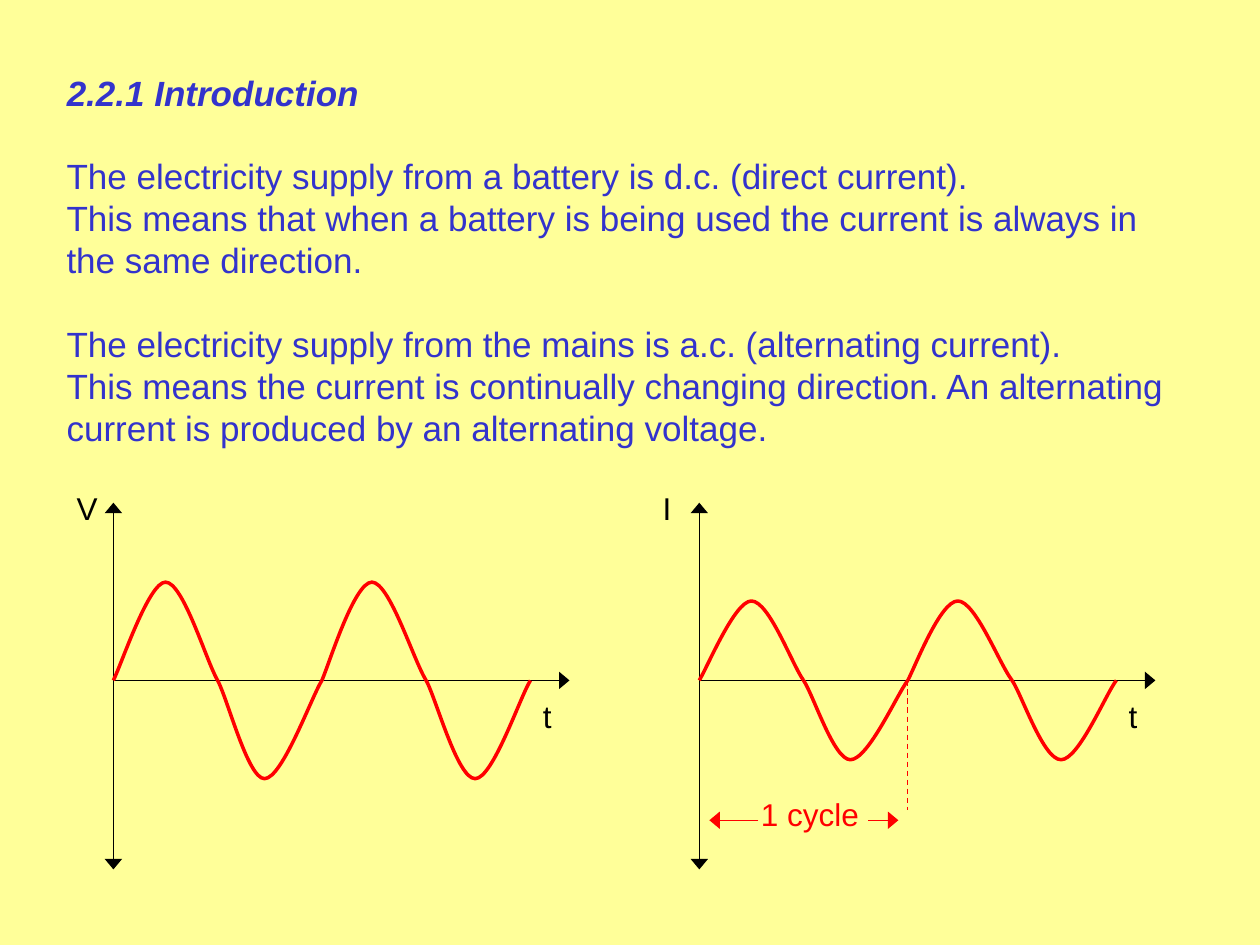
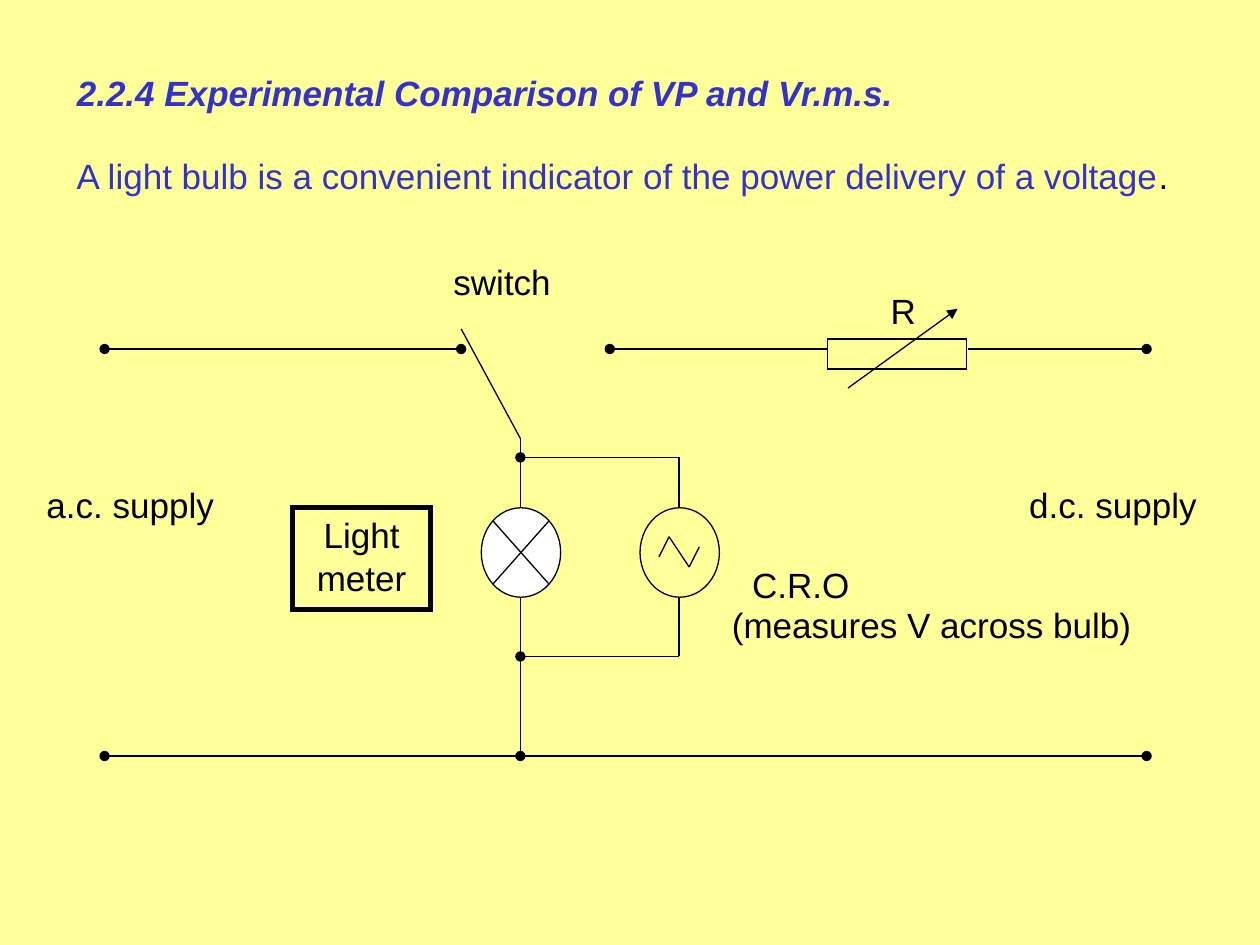
from lxml import etree
from pptx import Presentation
from pptx.dml.color import RGBColor
from pptx.enum.dml import MSO_LINE
from pptx.enum.shapes import MSO_CONNECTOR, MSO_SHAPE
from pptx.enum.text import MSO_ANCHOR, MSO_AUTO_SIZE, PP_ALIGN
from pptx.oxml.ns import qn
from pptx.util import Inches, Pt

STRAIGHT = MSO_CONNECTOR.STRAIGHT
DASH = MSO_LINE.DASH
RECTANGLE = MSO_SHAPE.RECTANGLE
OVAL = MSO_SHAPE.OVAL
LAMP = MSO_SHAPE.FLOWCHART_SUMMING_JUNCTION
TOP = MSO_ANCHOR.TOP
LEFT = PP_ALIGN.LEFT
CENTER = PP_ALIGN.CENTER
FIXED_SIZE = MSO_AUTO_SIZE.NONE

FONT = "Arial"
YELLOW, BLUE, BLACK, RED, WHITE = "FFFF99", "3333CC", "000000", "FF0000", "FFFFFF"
TITLE_ONLY = 5
TITLE_TOP, BODY_TOP = 0.52, 1.18
BLANK_LINE = 24
THIN = 0.75
ARROW = {"type": "triangle"}
WIDE_ARROW = {"type": "triangle", "w": "lg", "len": "med"}
DOT = {"type": "oval"}

TIME_AXIS = 5.4
WAVE_LENGTH = 3.31
HALF_WAVES = [
    (0, 0.08, 0.34, 0.5, 0.67, 0.89, 1),
    (0, 0.1, 0.29, 0.45, 0.62, 0.9, 1),
    (0, 0.07, 0.31, 0.48, 0.65, 0.88, 1),
    (0, 0.1, 0.3, 0.47, 0.64, 0.9, 1),
]
HALF_CYCLE = WAVE_LENGTH / len(HALF_WAVES)
BEND_HEIGHTS = (0, 0.17, 1, 1, 1, 0.2, 0)


def color(code):
    """Turn a hex string into a colour."""
    return RGBColor.from_string(code)


def format_text(frame, size, code, bold=False, italic=False, align=LEFT):
    """Give all text in a frame the same look."""
    frame.word_wrap = True
    frame.vertical_anchor = TOP
    for para in frame.paragraphs:
        para.alignment = align
        for span in para.runs:
            span.font.name = FONT
            span.font.size = Pt(size)
            span.font.bold = bold
            span.font.italic = italic
            span.font.color.rgb = color(code)


def add_page(deck, title, left, width):
    """Add a title-only slide with its heading in place."""
    page = deck.slides.add_slide(deck.slide_layouts[TITLE_ONLY])
    box = page.shapes.title
    box.left, box.top = Inches(left), Inches(TITLE_TOP)
    box.width, box.height = Inches(width), Inches(0.43)
    box.text_frame.text = title
    box.text_frame.auto_size = FIXED_SIZE
    format_text(box.text_frame, 20, BLUE, bold=True, italic=True)
    return page


def add_label(page, text, left, top, width, height=0.43, size=20, code=BLACK):
    """Add a text box and return its frame."""
    box = page.shapes.add_textbox(Inches(left), Inches(top), Inches(width), Inches(height))
    box.text_frame.text = text
    format_text(box.text_frame, size, code)
    return box.text_frame


def add_line(page, start, end, head=None, tail=None, code=BLACK, dash=None):
    """Draw a straight line with optional end marks."""
    x1, y1, x2, y2 = map(Inches, (*start, *end))
    line = page.shapes.add_connector(STRAIGHT, x1, y1, x2, y2)
    line.line.color.rgb = color(code)
    line.line.width = Pt(THIN)
    if dash:
        line.line.dash_style = dash
    for tag, mark in (("a:headEnd", head), ("a:tailEnd", tail)):
        if mark:
            etree.SubElement(line.get_or_add_ln(), qn(tag), mark)
    etree.SubElement(line._element.spPr, qn("a:effectLst"))


def add_symbol(page, kind, left, top, width, height, fill=None, weight=THIN):
    """Add an outlined circuit symbol."""
    shape = page.shapes.add_shape(kind, Inches(left), Inches(top), Inches(width), Inches(height))
    shape.shadow.inherit = False
    if fill:
        shape.fill.solid()
        shape.fill.fore_color.rgb = color(fill)
    else:
        shape.fill.background()
    shape.line.color.rgb = color(BLACK)
    shape.line.width = Pt(weight)
    if kind == RECTANGLE:
        etree.SubElement(shape.get_or_add_ln(), qn("a:miter"), lim="800000")
    return shape


def smooth_outline(shape):
    """Turn each three straight segments into one cubic curve."""
    outline = next(shape._element.iter(qn("a:path")))
    segments = outline.findall(qn("a:lnTo"))
    for first in range(0, len(segments), 3):
        curve = etree.SubElement(outline, qn("a:cubicBezTo"))
        for segment in segments[first:first + 3]:
            curve.append(segment[0])
            outline.remove(segment)


def add_half_wave(page, left, bends, heights):
    """Draw one half cycle from the positions of its curve controls."""
    points = [
        (Inches(left + x * HALF_CYCLE), Inches(TIME_AXIS - height))
        for x, height in zip(bends, heights)
    ]
    builder = page.shapes.build_freeform(*points[0])
    builder.add_line_segments(points[1:], close=False)
    wave = builder.convert_to_shape()
    smooth_outline(wave)
    wave.shadow.inherit = False
    wave.fill.background()
    wave.line.color.rgb = color(RED)
    wave.line.width = Pt(2)


def add_wave_graph(page, quantity, left, amplitude):
    """Draw axes, axis labels and two full cycles."""
    add_line(page, (left, 3.99), (left, 6.9), head=WIDE_ARROW, tail=WIDE_ARROW)
    add_line(page, (left, TIME_AXIS), (left + 3.62, TIME_AXIS), tail=WIDE_ARROW)
    add_label(page, quantity, left - 0.39, 3.83, 0.55, 0.4, 18)
    add_label(page, "t", left + WAVE_LENGTH, 5.48, 0.55, 0.4, 18)
    crest = [amplitude * height for height in BEND_HEIGHTS]
    trough = [-height for height in reversed(crest)]
    for index, bends in enumerate(HALF_WAVES):
        heights = trough if index % 2 else crest
        add_half_wave(page, left + index * HALF_CYCLE, bends, heights)


def build_introduction(deck):
    """Build the slide on direct and alternating current."""
    page = add_page(deck, "2.2.1 Introduction", 0.43, 9.14)
    paragraphs = [
        "The electricity supply from a battery is d.c. (direct current).",
        "This means that when a battery is being used the current is always in the same direction.",
        "The electricity supply from the mains is a.c. (alternating current).",
        "This means the current is continually changing direction. An alternating current is "
        "produced by an alternating voltage.",
    ]
    body = add_label(page, "\n".join(paragraphs), 0.43, BODY_TOP, 9.14, 2.43, code=BLUE)
    body.paragraphs[2].space_before = Pt(BLANK_LINE)
    add_wave_graph(page, "I", 5.55, 0.63)
    add_wave_graph(page, "V", 0.9, 0.78)
    add_line(page, (7.2, TIME_AXIS), (7.2, 6.43), code=RED, dash=DASH)
    add_label(page, "1 cycle", 5.94, 6.26, 1.26, 0.4, 18, RED)
    add_line(page, (6.89, 6.51), (7.13, 6.51), tail=WIDE_ARROW, code=RED)
    add_line(page, (6.02, 6.51), (5.63, 6.51), tail=WIDE_ARROW, code=RED)


def add_bulb_and_scope(page, bulb_x, scope_x):
    """Draw the bulb, the oscilloscope and the wires joining them."""
    for kind, x, fill in ((LAMP, bulb_x, WHITE), (OVAL, scope_x, None)):
        add_symbol(page, kind, x - 0.31, 4.03, 0.63, 0.71, fill)
    trace = [(5.23, 4.42), (5.31, 4.26), (5.47, 4.5), (5.55, 4.34)]
    for start, end in zip(trace, trace[1:]):
        add_line(page, start, end)
    for rail, terminal in ((3.63, 4.03), (5.21, 4.74)):
        add_line(page, (bulb_x, rail), (scope_x, rail), head=DOT)
        add_line(page, (scope_x, rail), (scope_x, terminal))


def add_resistor(page):
    """Draw the variable resistor."""
    add_symbol(page, RECTANGLE, 6.57, 2.69, 1.1, 0.24)
    add_line(page, (6.73, 3.08), (7.6, 2.45), tail=ARROW)


def add_light_meter(page):
    """Draw the light meter box."""
    meter = add_symbol(page, RECTANGLE, 2.32, 4.03, 1.1, 0.81, weight=3)
    meter.text_frame.text = "Light meter"
    format_text(meter.text_frame, 20, BLACK, align=CENTER)


def build_experiment(deck):
    """Build the slide with the bulb circuit."""
    page = add_page(deck, "2.2.4 Experimental Comparison of VP and Vr.m.s.", 0.51, 8.9)
    sentence = "A light bulb is a convenient indicator of the power delivery of a voltage"
    body = add_label(page, sentence, 0.51, BODY_TOP, 8.9, code=BLUE)
    stop = body.paragraphs[0].add_run()
    stop.text = "."
    format_text(body, 20, BLUE)
    stop.font.color.rgb = color(BLACK)

    left, right, bulb_x, scope_x = 0.83, 9.1, 4.13, 5.39
    supply, ground = 2.77, 6
    add_bulb_and_scope(page, bulb_x, scope_x)
    add_resistor(page)
    add_light_meter(page)
    add_line(page, (7.68, supply), (right, supply), tail=DOT)
    add_line(page, (6.57, supply), (4.84, supply), tail=DOT)
    add_line(page, (3.66, supply), (left, supply), head=DOT, tail=DOT)
    add_line(page, (left, ground), (right, ground), head=DOT, tail=DOT)
    add_line(page, (bulb_x, 4.74), (bulb_x, ground), tail=DOT)
    add_line(page, (bulb_x, 4.03), (bulb_x, 3.48))
    add_line(page, (bulb_x, 3.48), (3.66, 2.61))

    labels = [
        ("R", 6.97, 2.25, 0.39),
        ("a.c. supply", 0.27, 3.79, 1.81),
        ("d.c. supply", 8.07, 3.79, 1.81),
        ("C.R.O", 5.87, 4.42, 3.39),
        ("(measures V across bulb)", 5.71, 4.74, 3.78),
        ("switch", 3.5, 2.02, 1.42),
    ]
    for label in labels:
        add_label(page, *label)


def main():
    """Build and save the deck."""
    deck = Presentation()
    deck.slide_width, deck.slide_height = Inches(10), Inches(7.5)
    backdrop = deck.slide_master.background.fill
    backdrop.solid()
    backdrop.fore_color.rgb = color(YELLOW)
    build_introduction(deck)
    build_experiment(deck)
    deck.save("out.pptx")


if __name__ == "__main__":
    main()
